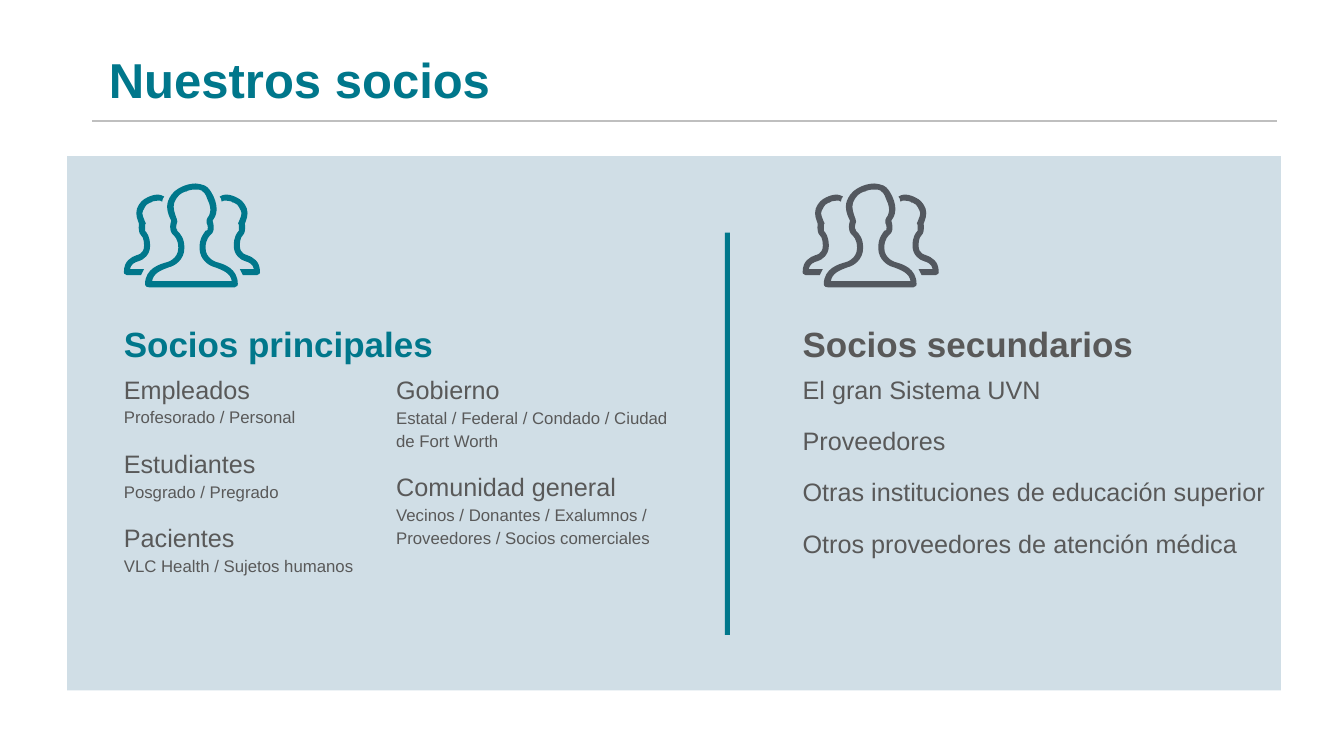
from dataclasses import dataclass

from lxml.etree import SubElement
from pptx import Presentation
from pptx.dml.color import RGBColor as Rgb
from pptx.enum.shapes import MSO_CONNECTOR as Connector, MSO_SHAPE as Shape
from pptx.enum.text import MSO_ANCHOR as Anchor, MSO_AUTO_SIZE as AutoSize, PP_ALIGN as Align
from pptx.oxml.ns import qn
from pptx.util import Inches, Pt


@dataclass(frozen=True)
class Theme:
    font: str = "Arial"
    teal: str = "00778B"
    text: str = "595959"
    slate: str = "53585F"
    panel: str = "D0DEE6"
    rule: str = "BFBFBF"
    white: str = "FFFFFF"
    title_size: int = 35
    heading_size: int = 25
    item_size: int = 18
    detail_size: int = 12
    leading: float = 1.14


# Icon outlines in hundredths of an inch: six numbers bend, two go straight
ICON_WIDTH = 135
FRONT_INNER = [
    (28, 97), (29, 89, 37, 86, 45, 83), (50, 82, 60, 76, 60, 64),
    (60, 54, 56, 50, 53, 47), (53, 47, 52, 46, 53, 46),
    (52, 46, 51, 43, 53, 38), (53, 36, 52, 34, 52, 34),
    (51, 31, 48, 24, 50, 19), (53, 12, 56, 10, 61, 8), (62, 8),
    (63, 7, 67, 6, 71, 6), (74, 6, 75, 6, 77, 7),
    (79, 8, 81, 10, 83, 16), (88, 26, 85, 32, 83, 34),
    (82, 35, 82, 37, 82, 39), (84, 43, 83, 45, 83, 46),
    (83, 46, 82, 47, 81, 47), (79, 50, 75, 54, 75, 64),
    (75, 76, 85, 82, 90, 83), (98, 86, 106, 89, 107, 97),
]
FRONT_OUTER = [
    (92, 78), (92, 78, 81, 75, 81, 64), (81, 55, 85, 52, 87, 50),
    (87, 50, 91, 47, 88, 37), (92, 32, 94, 24, 89, 13),
    (86, 7, 84, 4, 80, 2), (77, 1, 74, 0, 71, 0),
    (66, 0, 60, 2, 58, 3), (52, 6, 48, 8, 44, 17),
    (41, 25, 45, 33, 47, 37), (44, 46, 48, 50, 48, 50),
    (50, 52, 54, 55, 54, 64), (54, 75, 43, 78, 43, 78),
    (36, 80, 21, 84, 21, 100), (21, 100, 21, 103, 25, 103), (110, 103),
    (113, 103, 113, 100, 113, 100), (113, 84, 99, 80, 92, 78),
]
SIDE_FIGURE = [
    (122, 71), (122, 71, 115, 70, 115, 62), (115, 54, 117, 52, 119, 50),
    (119, 50, 121, 47, 120, 40), (121, 37, 124, 31, 122, 25),
    (119, 18, 116, 16, 112, 14), (110, 13, 106, 11, 101, 11),
    (99, 11, 97, 12, 95, 13), (96, 14, 97, 16, 97, 18),
    (98, 17, 100, 17, 101, 17), (104, 17, 108, 18, 108, 19), (109, 19),
    (112, 20, 113, 21, 116, 27), (118, 30, 115, 35, 114, 38),
    (113, 39, 113, 40, 114, 41), (114, 45, 114, 46, 114, 47),
    (112, 49, 109, 53, 109, 62), (109, 71, 116, 76, 120, 77),
    (124, 78, 128, 80, 129, 85), (115, 85),
    (116, 87, 117, 89, 118, 91), (132, 91),
    (135, 91, 135, 88, 135, 88), (135, 77, 128, 73, 122, 71),
]
SIDE_MIRRORED = [tuple(value if index % 2 else ICON_WIDTH - value
                       for index, value in enumerate(segment)) for segment in SIDE_FIGURE]
PEOPLE = [FRONT_INNER, FRONT_OUTER, SIDE_FIGURE, SIDE_MIRRORED]


class SlideBuilder:
    """Places elements on a grid of 160 columns by 90 rows."""

    def __init__(self, deck, theme):
        self.theme = theme
        self.unit = deck.slide_width / 160
        self.slide = deck.slides.add_slide(deck.slide_layouts[5])
        self.shapes = self.slide.shapes

    def grid(self, *cells):
        return [round(cell * self.unit) for cell in cells]

    def style(self, paragraph, color, size=None, bold=False, after=0):
        font = paragraph.font
        font.name, font.bold = self.theme.font, bold
        font.color.rgb = Rgb.from_string(color)
        if size:
            font.size = Pt(size)
        paragraph.line_spacing = self.theme.leading
        paragraph.space_after = Pt(after)
        paragraph.alignment = Align.LEFT

    def title(self, text, *box):
        title = self.shapes.title
        title.left, title.top, title.width, title.height = self.grid(*box)
        frame = title.text_frame
        frame.text = text
        frame.auto_size = AutoSize.NONE
        frame.vertical_anchor = Anchor.BOTTOM
        frame.margin_left, frame.margin_bottom = Inches(0.23), Inches(0.02)
        self.style(frame.paragraphs[0], self.theme.teal, self.theme.title_size, True)

    def rule(self, left, right, row):
        rule = self.shapes.add_connector(Connector.STRAIGHT, *self.grid(left, row, right, row))
        rule.line.color.rgb = Rgb.from_string(self.theme.rule)
        rule.line.width = Pt(2)
        SubElement(rule._element.spPr, qn("a:effectLst"))

    def paint(self, shape, color):
        shape.shadow.inherit = False
        shape.fill.solid()
        shape.fill.fore_color.rgb = Rgb.from_string(color)
        shape.line.fill.background()

    def block(self, color, *box):
        self.paint(self.shapes.add_shape(Shape.RECTANGLE, *self.grid(*box)), color)

    def people(self, color, left, top):
        builder = self.shapes.build_freeform(*PEOPLE[0][0], scale=Inches(0.01))
        for index, outline in enumerate(PEOPLE):
            if index:
                builder.move_to(*outline[0])
            builder.add_line_segments([segment[-2:] for segment in outline[1:]])
        icon = builder.convert_to_shape(*self.grid(left, top))
        self.bend(icon)
        self.paint(icon, color)

    def bend(self, icon):
        """Give the curved segments of the icon their control points."""
        segments = [segment for outline in PEOPLE for segment in outline[1:]]
        for line, segment in zip(list(icon._element.iter(qn("a:lnTo"))), segments):
            if len(segment) == 6:
                line.tag = qn("a:cubicBezTo")
                end = line[0]
                for x, y in (segment[:2], segment[2:4]):
                    end.addprevious(end.makeelement(qn("a:pt"), {"x": str(x), "y": str(y)}))

    def partners(self, items, *box, heading=None, heading_color=None):
        frame = self.shapes.add_textbox(*self.grid(*box)).text_frame
        frame.word_wrap = True
        frame.margin_left = frame.margin_top = frame.margin_right = frame.margin_bottom = 0
        paragraph = frame.paragraphs[0]
        if heading:
            paragraph.text = heading
            self.style(paragraph, heading_color, self.theme.heading_size, True, after=4)
        for index, (name, detail) in enumerate(items):
            if heading or index:
                paragraph = frame.add_paragraph()
            self.style(paragraph, self.theme.text, after=12)
            self.run(paragraph, name, self.theme.item_size)
            if detail:
                paragraph.add_line_break()
                self.run(paragraph, detail, self.theme.detail_size)

    def run(self, paragraph, text, size):
        run = paragraph.add_run()
        run.text = text
        run.font.size = Pt(size)


def main():
    deck = Presentation()
    deck.slide_width, deck.slide_height = Inches(13.33), Inches(7.5)
    theme = Theme()
    page = SlideBuilder(deck, theme)
    primary_left, secondary_left = 14.75, 95.55
    icon_top, list_top = 21.85, 37.68

    # Title and panel
    page.block(theme.panel, 8, 18.6, 144.5, 63.6)
    page.title("Nuestros socios", 10.2, 4.3, 127.7, 8.8)
    page.rule(11, 152, 14.4)

    # Primary partners, in two columns
    page.people(theme.teal, primary_left, icon_top)
    page.partners(
        [("Empleados", "Profesorado / Personal"),
         ("Estudiantes", "Posgrado / Pregrado"),
         ("Pacientes", "VLC Health / Sujetos humanos")],
        primary_left, list_top, 68, 47.9,
        heading="Socios principales", heading_color=theme.teal)

    # Secondary partners
    page.partners(
        [("El gran Sistema UVN", None), ("Proveedores", None),
         ("Otras instituciones de educación superior", None),
         ("Otros proveedores de atención médica", None)],
        secondary_left, list_top, 56.4, 22.3,
        heading="Socios secundarios", heading_color=theme.text)
    page.people(theme.slate, secondary_left, icon_top)

    # Second column of primary partners
    page.partners(
        [("Gobierno", "Estatal / Federal / Condado / Ciudad de Fort Worth"),
         ("Comunidad general",
          "Vecinos / Donantes / Exalumnos / Proveedores / Socios comerciales")],
        47.15, 44.1, 34.2, 22.3)

    # Divider and clear corner beside the title
    page.block(theme.teal, 86.3, 27.7, 0.6, 47.9)
    page.block(theme.white, 137.9, 1.2, 19.7, 12)

    deck.save("out.pptx")


if __name__ == "__main__":
    main()
